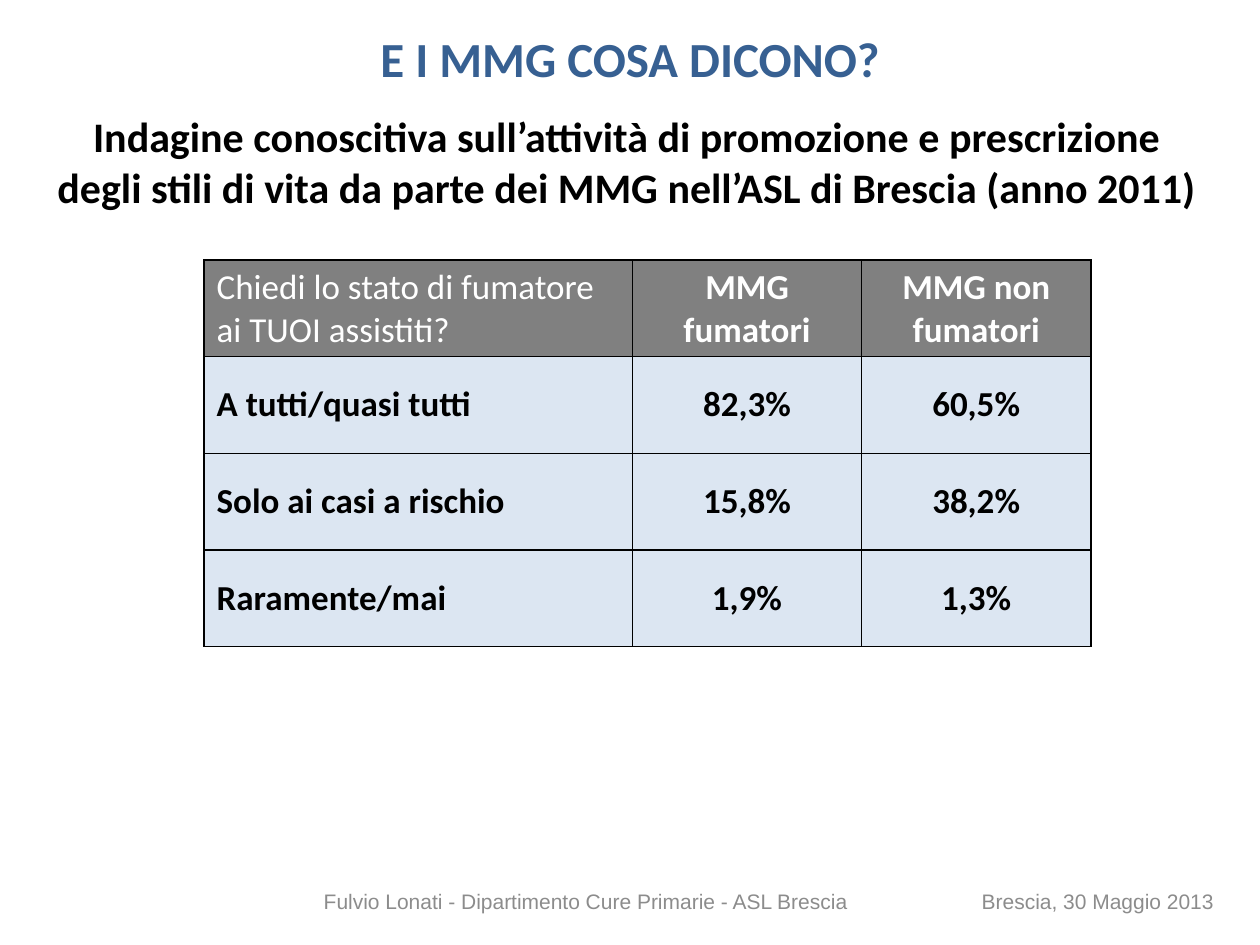
from lxml import etree
from pptx import Presentation
from pptx.dml.color import RGBColor
from pptx.enum.text import MSO_ANCHOR, PP_ALIGN
from pptx.oxml.ns import qn
from pptx.util import Pt

LEFT, CENTER = PP_ALIGN.LEFT, PP_ALIGN.CENTER
TOP, MIDDLE = MSO_ANCHOR.TOP, MSO_ANCHOR.MIDDLE

BLUE = RGBColor(0x37, 0x60, 0x92)
BLACK = RGBColor(0, 0, 0)
WHITE = RGBColor(0xFF, 0xFF, 0xFF)
HEADER_GRAY = RGBColor(0x80, 0x80, 0x80)
PALE_BLUE = RGBColor(0xDC, 0xE6, 0xF2)
FOOTER_GRAY = RGBColor(0x8C, 0x8C, 0x8C)

TITLE = "E I MMG COSA DICONO?"
SUBTITLE = (
    "Indagine conoscitiva sull’attività di promozione e prescrizione "
    "degli stili di vita da parte dei MMG nell’ASL di Brescia (anno 2011)"
)
SURVEY = [
    ("Chiedi lo stato di fumatore ai TUOI assistiti?", "MMG fumatori", "MMG non fumatori"),
    ("A tutti/quasi tutti", "82,3%", "60,5%"),
    ("Solo ai casi a rischio", "15,8%", "38,2%"),
    ("Raramente/mai", "1,9%", "1,3%"),
]
AUTHOR = "Fulvio Lonati - Dipartimento Cure Primarie - ASL Brescia"
DATE = "Brescia, 30 Maggio 2013"

COLUMN_WIDTHS = (244.8, 131, 131)
ROW_HEIGHT = 55.25
DATE_TAB = 376


def style(paragraph, size, color, bold, align, font="Calibri"):
    paragraph.alignment = align
    paragraph.font.name = font
    paragraph.font.size = Pt(size)
    paragraph.font.bold = bold
    paragraph.font.color.rgb = color


def add_text(slide, box, text, anchor=TOP):
    frame = slide.shapes.add_textbox(*map(Pt, box)).text_frame
    frame.word_wrap = True
    frame.vertical_anchor = anchor
    frame.text = text
    return frame


def add_borders(cell):
    properties = cell._tc.get_or_add_tcPr()
    for position, side in enumerate(("lnL", "lnR", "lnT", "lnB")):
        line = etree.Element(qn(f"a:{side}"), w=str(Pt(1)))
        fill = etree.SubElement(line, qn("a:solidFill"))
        etree.SubElement(fill, qn("a:srgbClr"), val=str(BLACK))
        properties.insert(position, line)


def add_survey(slide):
    table = slide.shapes.add_table(
        len(SURVEY), len(COLUMN_WIDTHS), Pt(116.6), Pt(148.5),
        Pt(sum(COLUMN_WIDTHS)), Pt(ROW_HEIGHT * len(SURVEY)),
    ).table
    for column, width in zip(table.columns, COLUMN_WIDTHS):
        column.width = Pt(width)
    for r, answers in enumerate(SURVEY):
        table.rows[r].height = Pt(ROW_HEIGHT)
        is_header = r == 0
        for c, answer in enumerate(answers):
            cell = table.cell(r, c)
            cell.text = answer
            cell.vertical_anchor = MIDDLE
            cell.fill.solid()
            cell.fill.fore_color.rgb = HEADER_GRAY if is_header else PALE_BLUE
            style(
                cell.text_frame.paragraphs[0], 20, WHITE if is_header else BLACK,
                not (is_header and c == 0), LEFT if c == 0 else CENTER,
            )
            add_borders(cell)


def add_footer(slide):
    frame = add_text(slide, (170.6, 500.4, 538.6, 28.8), f"{AUTHOR}\t{DATE}", MIDDLE)
    frame.margin_left = Pt(14.4)
    paragraph = frame.paragraphs[0]
    tabs = etree.SubElement(paragraph._p.get_or_add_pPr(), qn("a:tabLst"))
    etree.SubElement(tabs, qn("a:tab"), pos=str(Pt(DATE_TAB)), algn="l")
    style(paragraph, 12, FOOTER_GRAY, False, LEFT, "Arial")


def main():
    deck = Presentation()
    deck.slide_width, deck.slide_height = Pt(720), Pt(540)
    slide = deck.slides.add_slide(deck.slide_layouts[6])
    title = add_text(slide, (0, 13, 720, 41), TITLE)
    style(title.paragraphs[0], 28, BLUE, True, CENTER)
    subtitle = add_text(slide, (23, 59.8, 670.3, 65.5), SUBTITLE)
    style(subtitle.paragraphs[0], 24, BLACK, True, CENTER)
    add_survey(slide)
    add_footer(slide)
    deck.save("out.pptx")


if __name__ == "__main__":
    main()
